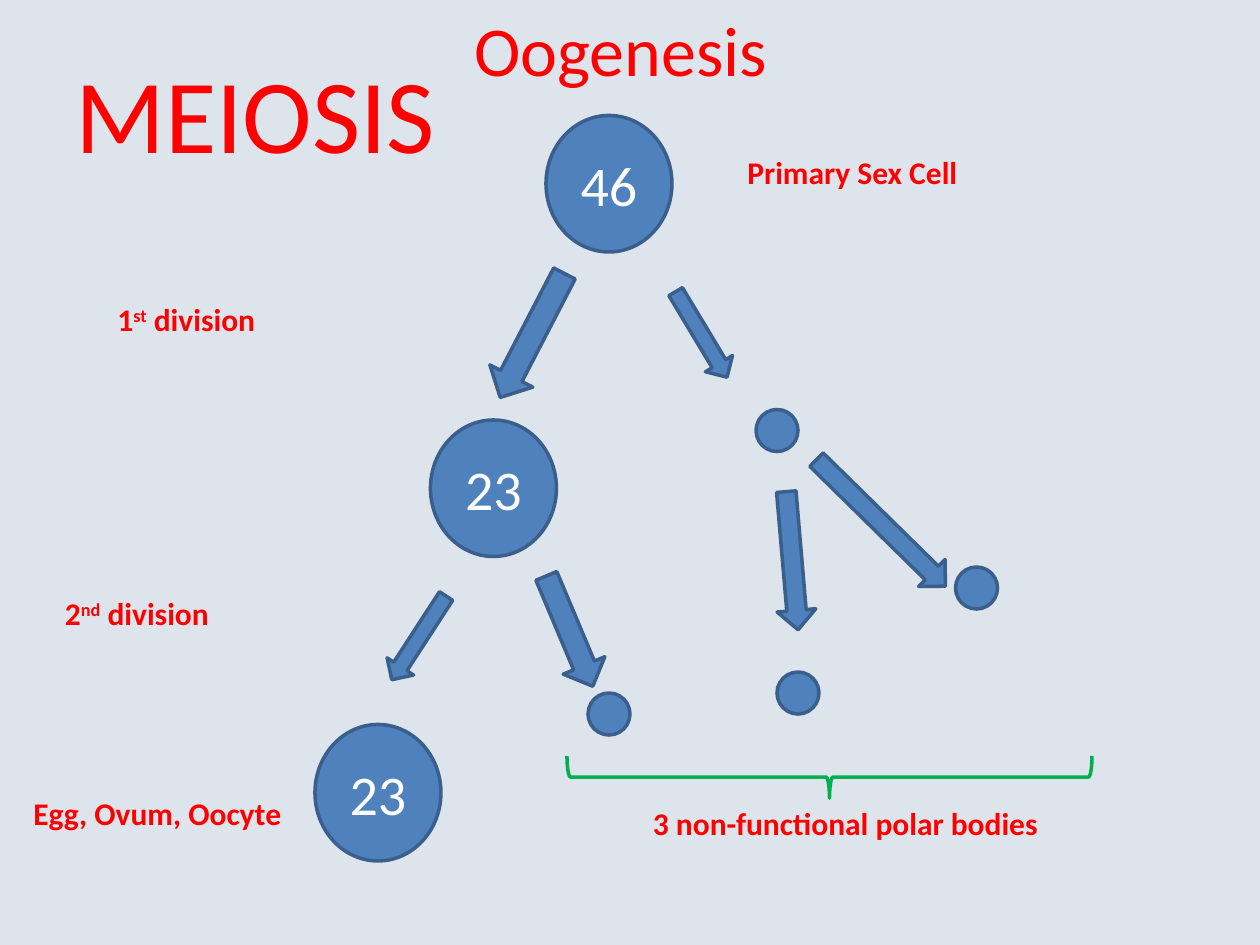
import pptx
import pptx.util
import pptx.dml.color
import pptx.enum.shapes
import pptx.enum.text

THEME = {
    "font": "Calibri",
    "background": "DDE4EB", "fill": "4F81BD", "outline": "3A5F8C",
    "label": "FF0000", "number": "FFFFFF", "brace": "00B050",
    "banner_size": 60, "title_size": 40, "number_size": 32, "label_size": 18,
    "line": 2,
}

# The slide is a grid of 120 columns by 90 rows.
COLS, ROWS = 120, 90
WIDTH, HEIGHT = pptx.util.Inches(10), pptx.util.Inches(7.5)

# Egg line: each division moves the cell left and down by one step.
CELL_NUMBERS = ["46", "23", "23"]
CELL_START, CELL_STEP, CELL_SIZE = (52, 11), (-11, 29), (12, 13)

POLAR_BODIES = [(72, 39), (91, 54), (74, 64), (56, 66)]
POLAR_SIZE = (4, 4)

# left, top, width, height, clockwise turn in degrees
ARROWS = [
    (48.4, 25.3, 4.6, 13.3, 27.4),
    (65.3, 27.1, 3, 9.5, -31),
    (38.4, 56, 3, 9.5, 33),
    (52.1, 54.4, 4.3, 11.4, -22.8),
    (73.6, 46.8, 3.7, 13.2, -4.9),
    (82.1, 41.2, 3.6, 17.2, -45.5),
]

BRACE = (77, 49, 4, 50, 270)

# box, size name, bold, runs as (text, superscript)
LABELS = [
    ((44, 0, 30.6, 9.3), "title_size", False, [("Oogenesis", False)]),
    ((6, 4, 37, 13.3), "banner_size", False, [("MEIOSIS", False)]),
    ((70, 14, 22.6, 4.8), "label_size", True, [("Primary Sex Cell", False)]),
    ((10, 28, 15.8, 4.8), "label_size", True,
     [("1", False), ("st", True), (" division", False)]),
    ((5, 56, 16.5, 4.8), "label_size", True,
     [("2", False), ("nd", True), (" division", False)]),
    ((2, 75, 26.3, 4.8), "label_size", True, [("Egg, Ovum, Oocyte", False)]),
    ((61, 76, 39.3, 4.8), "label_size", True,
     [("3 non-functional polar bodies", False)]),
]


def color(name):
    return pptx.dml.color.RGBColor.from_string(THEME[name])


def place(x, y, w, h):
    """Turn grid columns and rows into slide lengths."""
    return (round(x * WIDTH / COLS), round(y * HEIGHT / ROWS),
            round(w * WIDTH / COLS), round(h * HEIGHT / ROWS))


def style_run(r, size, ink, bold=False):
    r.font.name = THEME["font"]
    r.font.size = pptx.util.Pt(THEME[size])
    r.font.bold = bold
    r.font.color.rgb = color(ink)


def add_shape(s, kind, box, turn=0, fill="fill", outline="outline"):
    sp = s.shapes.add_shape(kind, *place(*box))
    sp.shadow.inherit = False
    sp.rotation = turn
    if fill:
        sp.fill.solid()
        sp.fill.fore_color.rgb = color(fill)
    else:
        sp.fill.background()
    sp.line.color.rgb = color(outline)
    sp.line.width = pptx.util.Pt(THEME["line"])
    return sp


def add_label(s, box, size, bold, runs):
    tf = s.shapes.add_textbox(*place(*box)).text_frame
    tf.word_wrap = size == "banner_size"
    tf.auto_size = pptx.enum.text.MSO_AUTO_SIZE.SHAPE_TO_FIT_TEXT
    for text, superscript in runs:
        r = tf.paragraphs[0].add_run()
        r.text = text
        style_run(r, size, "label", bold)
        if superscript:
            r.font._element.set("baseline", "30000")


def add_cell(s, step, number):
    corner = [a + step * d for a, d in zip(CELL_START, CELL_STEP)]
    kind = pptx.enum.shapes.MSO_SHAPE.FLOWCHART_CONNECTOR
    tf = add_shape(s, kind, (*corner, *CELL_SIZE)).text_frame
    tf.text = number
    tf.vertical_anchor = pptx.enum.text.MSO_ANCHOR.MIDDLE
    p = tf.paragraphs[0]
    p.alignment = pptx.enum.text.PP_ALIGN.CENTER
    style_run(p.runs[0], "number_size", "number")


def main():
    shape_kinds = pptx.enum.shapes.MSO_SHAPE
    prs = pptx.Presentation()
    prs.slide_width, prs.slide_height = WIDTH, HEIGHT
    s = prs.slides.add_slide(prs.slide_layouts[6])
    s.background.fill.solid()
    s.background.fill.fore_color.rgb = color("background")

    for *box, turn in ARROWS:
        add_shape(s, shape_kinds.DOWN_ARROW, box, turn)
    for step, number in enumerate(CELL_NUMBERS):
        add_cell(s, step, number)
    for corner in POLAR_BODIES:
        add_shape(s, shape_kinds.FLOWCHART_CONNECTOR, (*corner, *POLAR_SIZE))
    *box, turn = BRACE
    add_shape(s, shape_kinds.LEFT_BRACE, box, turn, fill=None, outline="brace")
    for label in LABELS:
        add_label(s, *label)

    prs.save("out.pptx")


if __name__ == "__main__":
    main()
